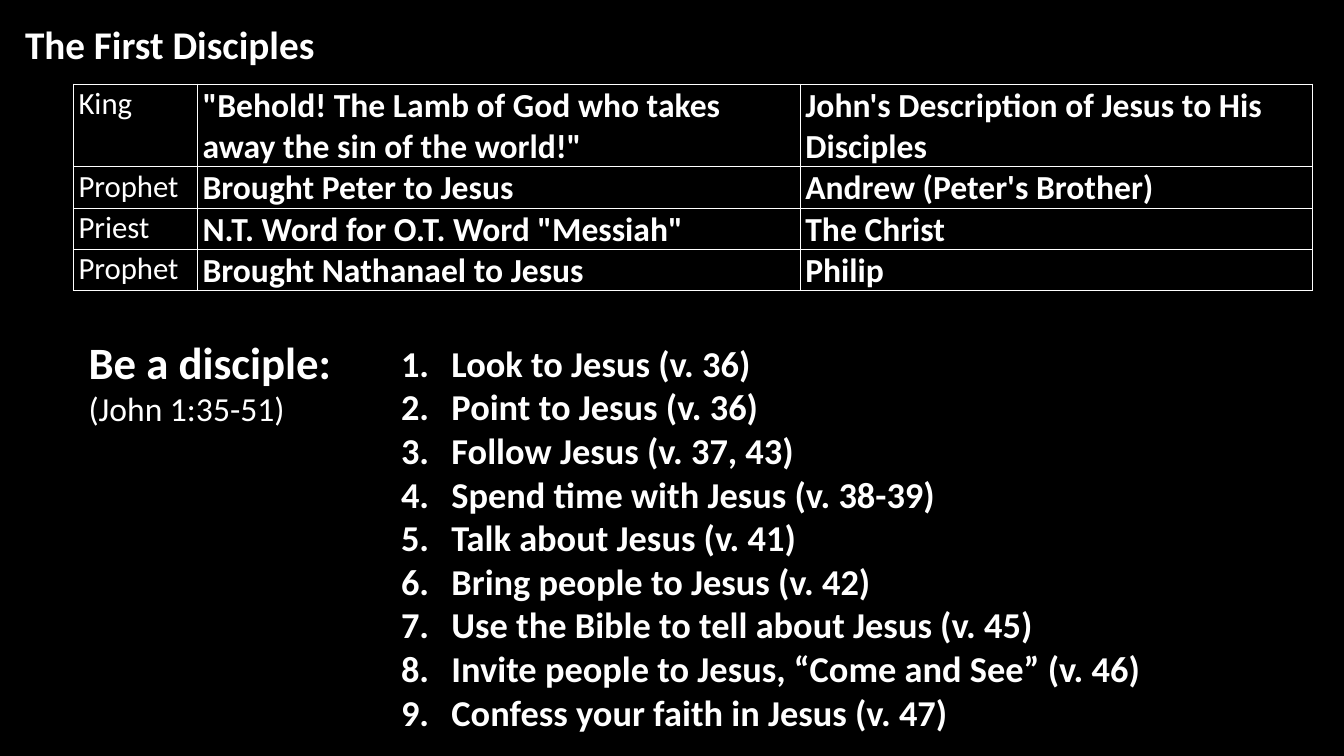
from lxml import etree
from pptx import Presentation
from pptx import util as u
from pptx.dml.color import RGBColor
from pptx.enum import text
from pptx.oxml import ns

Pt = u.Pt
hues = {"back": "000000", "ink": "FFFFFF"}
deck = Presentation()
deck.slide_width, deck.slide_height = Pt(960), Pt(540)
slide = deck.slides.add_slide(deck.slide_layouts[6])
slide.background.fill.solid()
slide.background.fill.fore_color.rgb = RGBColor.from_string(hues["back"])


def add_run(para, words, size, bold):
    run = para.add_run()
    run.text = words
    run.font.name = "Calibri"
    run.font.size = Pt(size)
    run.font.bold = bold
    run.font.color.rgb = RGBColor.from_string(hues["ink"])


def add_box(left, top, width, height, lines):
    frame = slide.shapes.add_textbox(Pt(left), Pt(top), Pt(width), Pt(height)).text_frame
    frame.word_wrap = True
    frame.auto_size = text.MSO_AUTO_SIZE.SHAPE_TO_FIT_TEXT
    for i, (words, size, bold) in enumerate(lines):
        para = frame.add_paragraph() if i else frame.paragraphs[0]
        add_run(para, words, size, bold)
    return frame


add_box(10.8, 10.8, 839.5, 41, [("The First Disciples", 28, True)])

rows = [
    ("King", '"Behold! The Lamb of God who takes away the sin of the world!"',
     "John's Description of Jesus to His Disciples"),
    ("Prophet", "Brought Peter to Jesus", "Andrew (Peter's Brother)"),
    ("Priest", 'N.T. Word for O.T. Word "Messiah"', "The Christ"),
    ("Prophet", "Brought Nathanael to Jesus", "Philip"),
]
holder = slide.shapes.add_table(4, 3, Pt(52.5), Pt(60.2), Pt(885), Pt(147.5))
table = holder.table
table.first_row = table.horz_banding = False
for col, width in zip(table.columns, (88.6, 430.6, 365.8)):
    col.width = Pt(width)
for r, row in enumerate(rows):
    table.rows[r].height = Pt(29.5 if r else 59)
    for c, words in enumerate(row):
        cell = table.cell(r, c)
        cell.margin_left, cell.margin_right = Pt(3.6), Pt(0.7)
        cell.margin_top, cell.margin_bottom = Pt(0.7), Pt(0)
        props = cell._tc.get_or_add_tcPr()
        for side in ("lnL", "lnR", "lnT", "lnB"):
            edge = etree.SubElement(props, ns.qn("a:" + side), w=str(Pt(1)))
            fill = etree.SubElement(edge, ns.qn("a:solidFill"))
            etree.SubElement(fill, ns.qn("a:srgbClr"), val=hues["ink"])
        cell.fill.background()
        add_run(cell.text_frame.paragraphs[0], words, 24 if c else 22, c > 0)

steps = [
    "Look to Jesus (v. 36)",
    "Point to Jesus (v. 36)",
    "Follow Jesus (v. 37, 43)",
    "Spend time with Jesus (v. 38-39)",
    "Talk about Jesus (v. 41)",
    "Bring people to Jesus (v. 42)",
    "Use the Bible to tell about Jesus (v. 45)",
    "Invite people to Jesus, “Come and See” (v. 46)",
    "Confess your faith in Jesus (v. 47)",
]
list_box = add_box(279.4, 239.8, 571, 291, [(step, 26, True) for step in steps])
for para in list_box.paragraphs:
    props = para._p.get_or_add_pPr()
    props.set("marL", str(Pt(36)))
    props.set("indent", str(Pt(-36)))
    etree.SubElement(props, ns.qn("a:buFont"), typeface="+mj-lt")
    etree.SubElement(props, ns.qn("a:buAutoNum"), type="arabicPeriod")

add_box(56.2, 235.4, 201.6, 75, [("Be a disciple:", 32, True), ("(John 1:35-51)", 24, False)])

deck.save("out.pptx")
